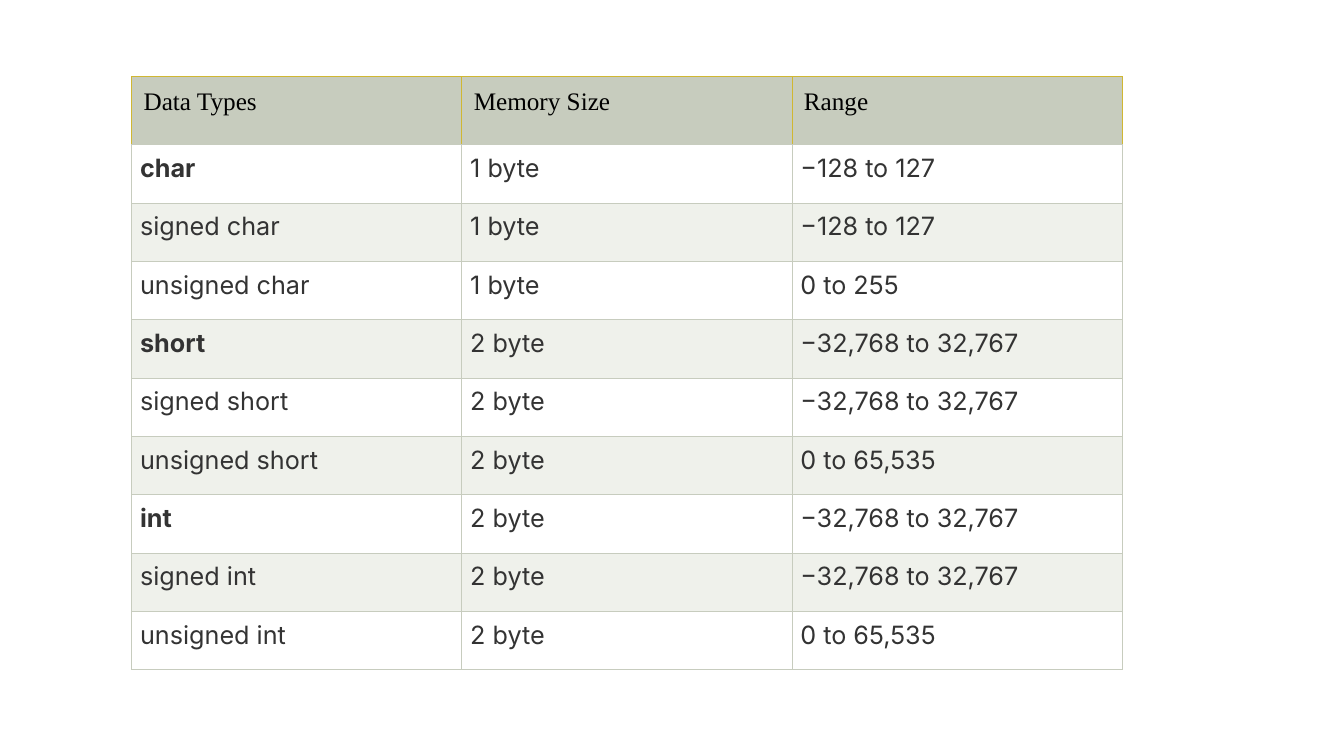
from dataclasses import dataclass

from lxml import etree
from pptx import Presentation
from pptx.dml.color import RGBColor
from pptx.enum import text
from pptx.oxml.ns import qn
from pptx.util import Cm, Pt


@dataclass(frozen=True)
class Theme:
    sage: str = "C7CCBE"
    pale: str = "EFF1EB"
    white: str = "FFFFFF"
    gold: str = "D0B732"
    black: str = "000000"
    charcoal: str = "333333"
    header_font: str = "Times New Roman"
    body_font: str = "Inter"
    size: int = 18
    rule: float = 0.75


THEME = Theme()

HEADINGS = ("Data Types", "Memory Size", "Range")
# base type, memory size, signed range, unsigned range
FAMILIES = (
    ("char", "1 byte", "−128 to 127", "0 to 255"),
    ("short", "2 byte", "−32,768 to 32,767", "0 to 65,535"),
    ("int", "2 byte", "−32,768 to 32,767", "0 to 65,535"),
)

HEADER_HEIGHT = Cm(1.72)
ROW_HEIGHT = Cm(1.47)
HEADER_INSET = Cm(0.3)
BODY_INSET = Cm(0.21)


def type_rows():
    for name, memory, signed, unsigned in FAMILIES:
        yield name, memory, signed
        yield f"signed {name}", memory, signed
        yield f"unsigned {name}", memory, unsigned


def set_borders(cell, colours):
    """Draw the left, right, top and bottom rules, in that order."""
    properties = cell._tc.get_or_add_tcPr()
    for side, colour in zip("LRTB", colours):
        line = etree.SubElement(properties, qn(f"a:ln{side}"), w=str(Pt(THEME.rule)))
        fill = etree.SubElement(line, qn("a:solidFill"))
        etree.SubElement(fill, qn("a:srgbClr"), val=colour)


def fill_cell(cell, words, fill, colour, borders, inset, align, font):
    set_borders(cell, borders)
    cell.fill.solid()
    cell.fill.fore_color.rgb = RGBColor.from_string(fill)
    for side in ("left", "right", "top", "bottom"):
        setattr(cell, f"margin_{side}", inset)
    para = cell.text_frame.paragraphs[0]
    para.alignment = align
    span = para.add_run()
    span.text = words
    for key, value in font.items():
        setattr(span.font, key, value)
    span.font.color.rgb = RGBColor.from_string(colour)


def add_types_table(page, left, top, width):
    rows = [HEADINGS, *type_rows()]
    height = HEADER_HEIGHT + ROW_HEIGHT * (len(rows) - 1)
    table = page.shapes.add_table(
        len(rows), len(HEADINGS), left, top, width, height).table
    for column in table.columns:
        column.width = width // len(HEADINGS)

    for index, words in enumerate(rows):
        header = index == 0
        table.rows[index].height = HEADER_HEIGHT if header else ROW_HEIGHT
        if header:
            look = dict(fill=THEME.sage, colour=THEME.black, inset=HEADER_INSET,
                        borders=[THEME.gold] * 3 + [THEME.sage],
                        align=text.PP_ALIGN.LEFT)
        else:
            look = dict(fill=THEME.white if index % 2 else THEME.pale,
                        colour=THEME.charcoal, inset=BODY_INSET,
                        borders=[THEME.sage] * 4, align=text.PP_ALIGN.JUSTIFY)
        for column, entry in enumerate(words):
            font = {
                "name": THEME.header_font if header else THEME.body_font,
                "size": Pt(THEME.size),
                "bold": column == 0 and index % 3 == 1,
            }
            fill_cell(table.cell(index, column), entry, font=font, **look)


def main():
    deck = Presentation()
    deck.slide_width, deck.slide_height = Cm(33.87), Cm(19.05)
    page = deck.slides.add_slide(deck.slide_layouts[6])
    add_types_table(page, Cm(3.32), Cm(1.93), Cm(24.96))
    deck.save("out.pptx")


if __name__ == "__main__":
    main()
